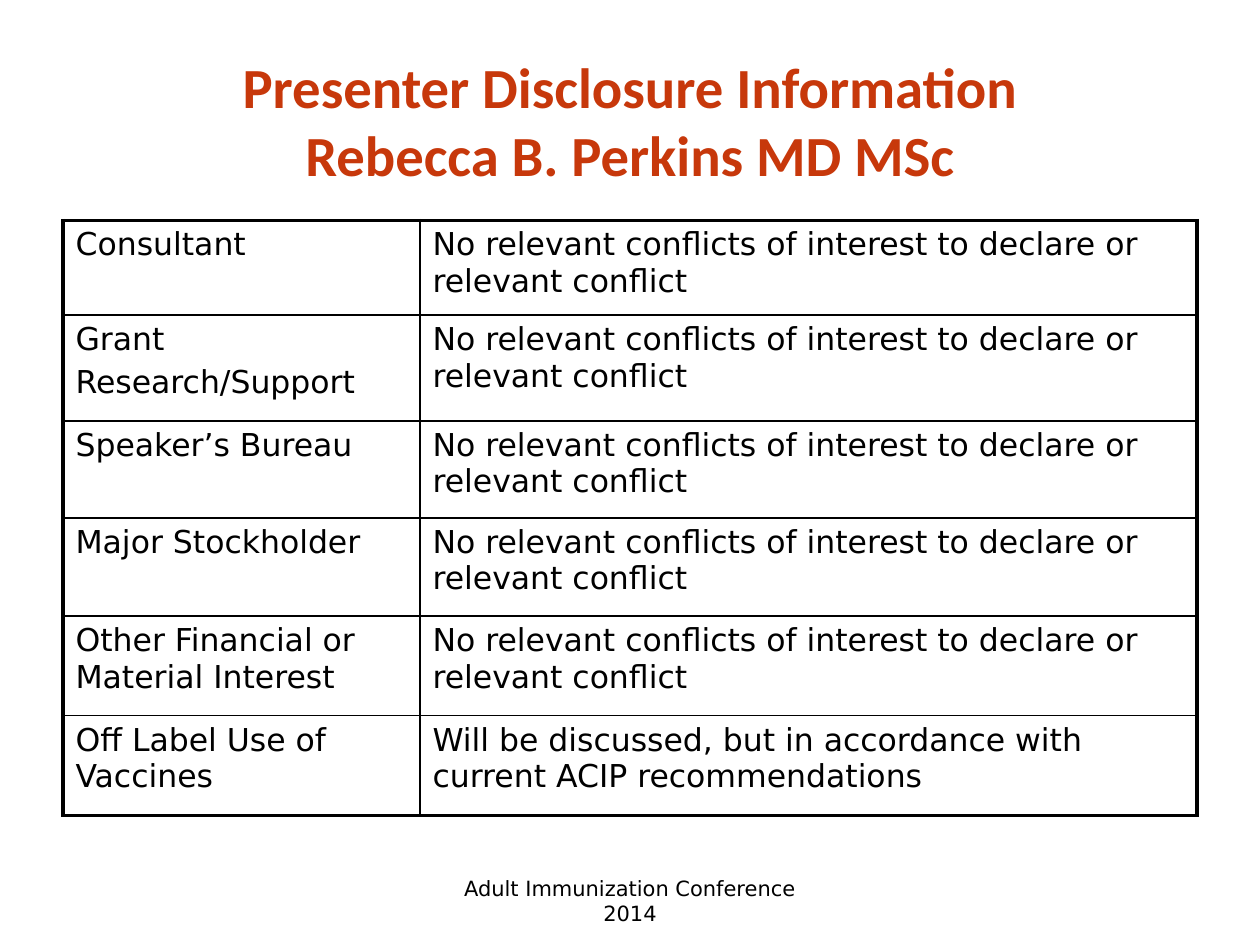
from lxml.etree import SubElement
from pptx import Presentation
from pptx.dml.color import RGBColor
from pptx.enum.text import MSO_ANCHOR, MSO_AUTO_SIZE, PP_ALIGN
from pptx.oxml.ns import qn
from pptx.util import Pt

COLORS = {"title": "C7380B", "text": "000000", "line": "000000"}
FORMATS = {
    "title": {"name": "Calibri", "size": Pt(32.4), "bold": True},
    "cell": {"name": "DejaVu Sans", "size": Pt(18), "bold": False},
    "footer": {"name": "DejaVu Sans", "size": Pt(12), "bold": False},
}
THIN, THICK = 1, 2.25

NO_CONFLICT = "No relevant conflicts of interest to declare or relevant conflict"
DISCLOSURES = [
    ("Consultant", NO_CONFLICT, 54),
    ("Grant\nResearch/Support", NO_CONFLICT, 60.5),
    ("Speaker’s Bureau", NO_CONFLICT, 55.4),
    ("Major Stockholder", NO_CONFLICT, 56.2),
    ("Other Financial or Material Interest", NO_CONFLICT, 56.9),
    ("Off Label Use of Vaccines",
     "Will be discussed, but in accordance with current ACIP recommendations", 56.9),
]


def write(tf, text, kind, color="text", align=PP_ALIGN.LEFT, space_before=0):
    tf.text = text
    tf.word_wrap = True
    for i, p in enumerate(tf.paragraphs):
        p.alignment = align
        p.space_before = Pt(space_before if i else 0)
        for r in p.runs:
            for name, value in FORMATS[kind].items():
                setattr(r.font, name, value)
            r.font.color.rgb = RGBColor.from_string(COLORS[color])


def set_borders(cell, widths):
    """Draw cell borders; widths maps L, R, T and B to points."""
    tcPr = cell._tc.get_or_add_tcPr()
    for side, width in widths.items():
        ln = SubElement(tcPr, qn(f"a:ln{side}"), w=str(Pt(width)))
        fill = SubElement(ln, qn("a:solidFill"))
        SubElement(fill, qn("a:srgbClr"), val=COLORS["line"])


def add_title(slide, left, top, width, height):
    sp = slide.shapes.title
    sp.left, sp.top, sp.width, sp.height = map(Pt, (left, top, width, height))
    tf = sp.text_frame
    tf.auto_size = MSO_AUTO_SIZE.NONE
    tf.vertical_anchor = MSO_ANCHOR.MIDDLE
    tf.margin_top = Pt(7)
    write(tf, "Presenter Disclosure Information\vRebecca B. Perkins MD MSc",
          "title", "title", PP_ALIGN.CENTER)


def add_disclosures(slide, left, top, width, label_width):
    rows, cols = len(DISCLOSURES), 2
    height = sum(row[-1] for row in DISCLOSURES)
    table = slide.shapes.add_table(
        rows, cols, Pt(left), Pt(top), Pt(width), Pt(height)).table
    table.first_row = table.horz_banding = False
    table.columns[0].width = Pt(label_width)
    table.columns[1].width = Pt(width - label_width)
    for i, (*texts, row_height) in enumerate(DISCLOSURES):
        table.rows[i].height = Pt(row_height)
        for j, text in enumerate(texts):
            cell = table.cell(i, j)
            write(cell.text_frame, text, "cell", space_before=3.6)
            set_borders(cell, {
                "L": THICK if j == 0 else THIN,
                "R": THICK if j == cols - 1 else THIN,
                "T": THICK if i == 0 else THIN,
                "B": THICK if i == rows - 1 else THIN,
            })
            cell.fill.background()


def add_footer(slide, left, top, width, height):
    tf = slide.shapes.add_textbox(*map(Pt, (left, top, width, height))).text_frame
    tf.vertical_anchor = MSO_ANCHOR.MIDDLE
    write(tf, "Adult Immunization Conference 2014", "footer", align=PP_ALIGN.CENTER)


def main():
    prs = Presentation()
    prs.slide_width, prs.slide_height = Pt(720), Pt(540)
    slide = prs.slides.add_slide(prs.slide_layouts[5])
    add_title(slide, 36, 21.6, 648, 90)
    add_disclosures(slide, 36, 126, 648, 204)
    add_footer(slide, 246, 500.4, 228, 28.8)
    prs.save("out.pptx")


if __name__ == "__main__":
    main()
